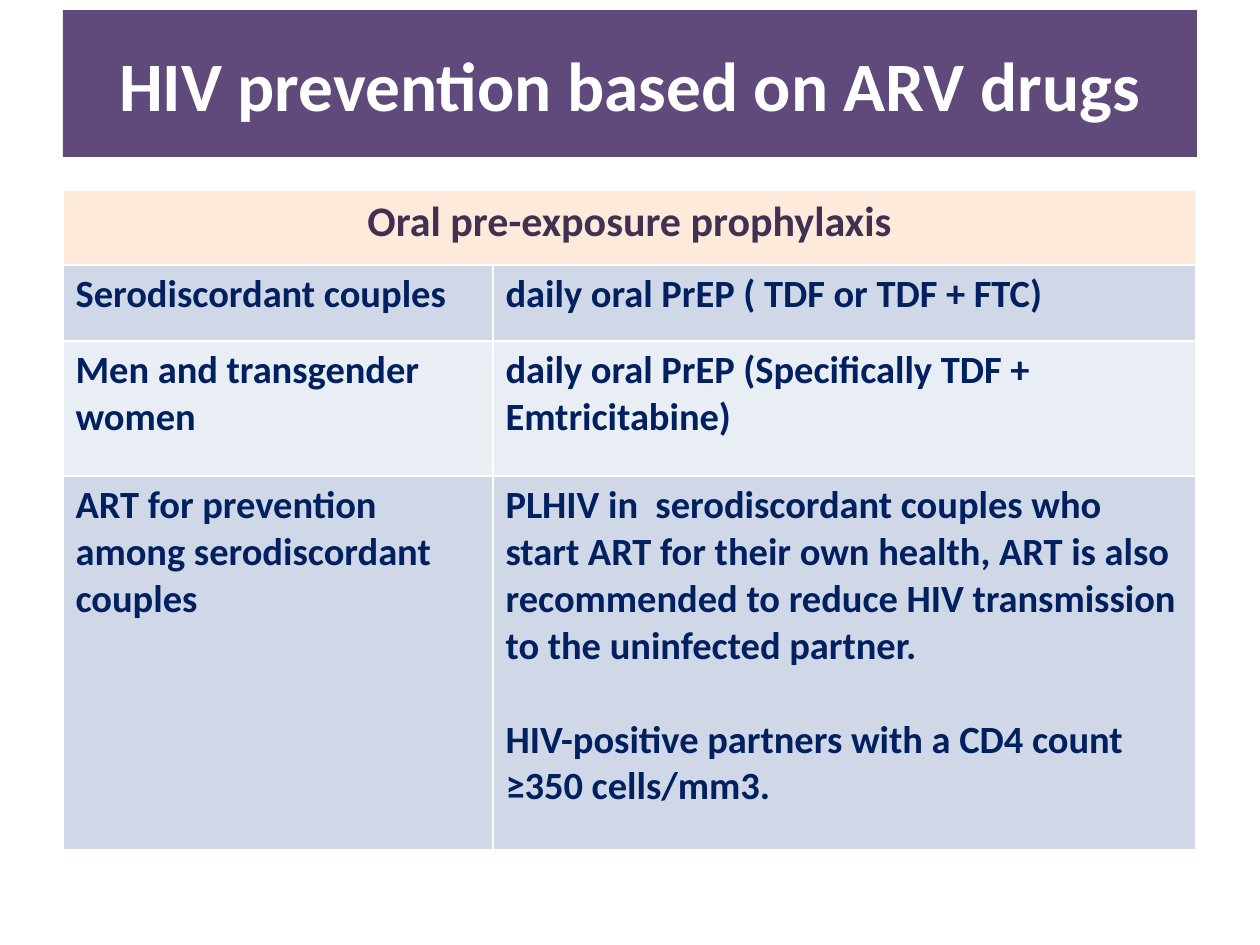
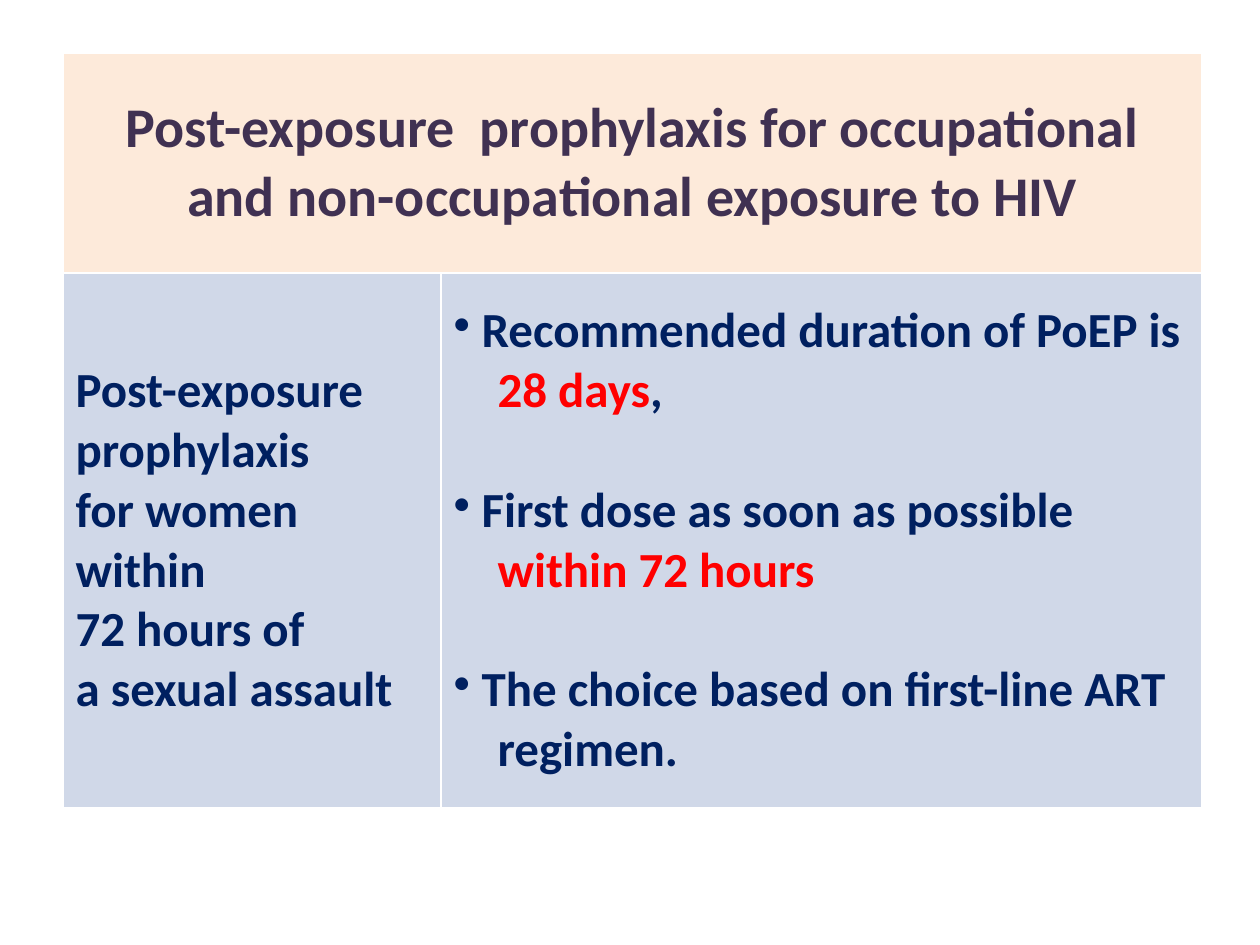
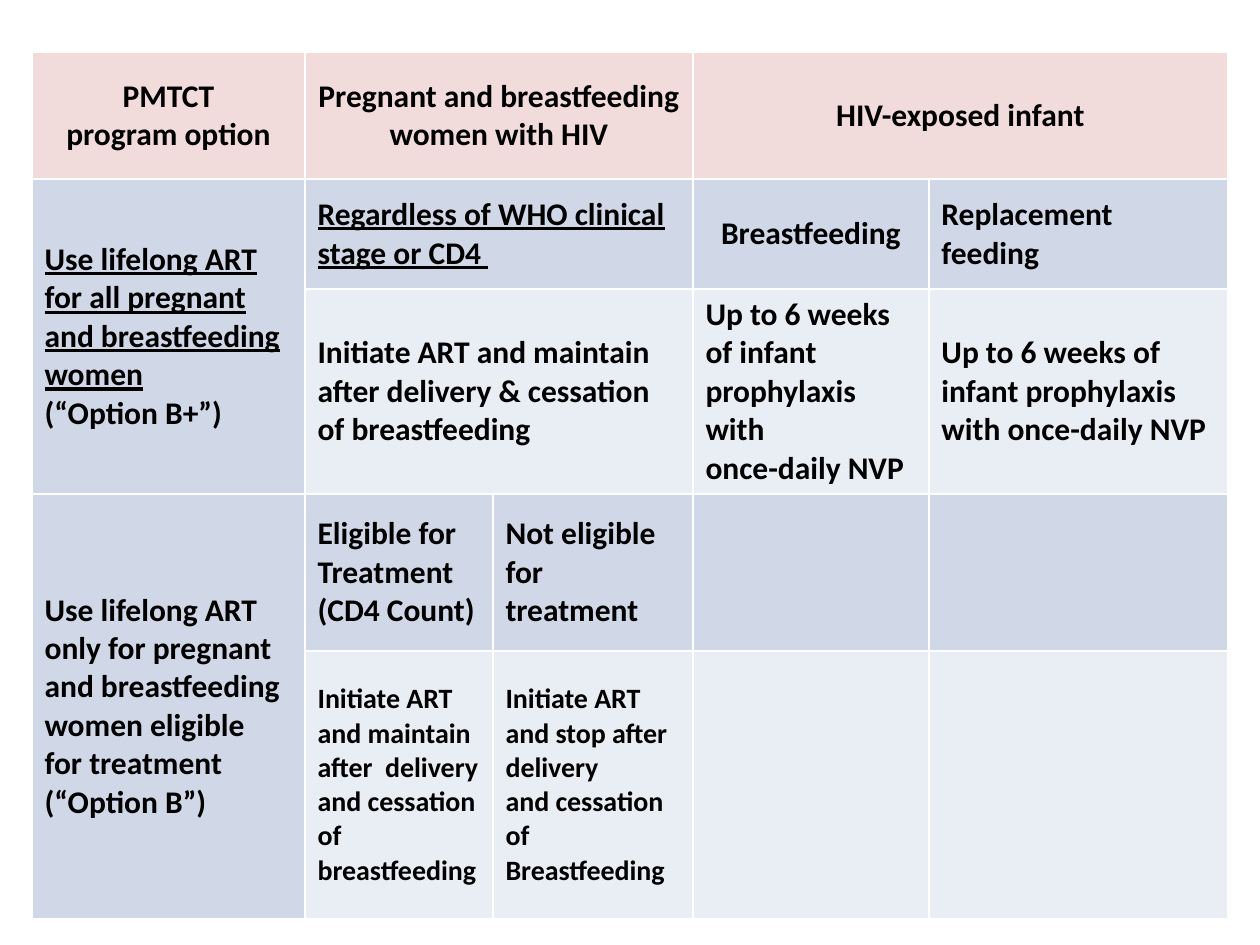
from pptx import Presentation
from pptx import util as u
from pptx.dml.color import RGBColor
from pptx.enum import shapes, text
from pptx.oxml.xmlchemy import OxmlElement

PX = 914400 / 126
FONT = "Calibri"
WHITE = RGBColor(0xFF, 0xFF, 0xFF)
BLACK = RGBColor(0, 0, 0)
RED = RGBColor(0xFF, 0, 0)
NAVY = RGBColor(0x00, 0x20, 0x60)
PLUM = RGBColor(0x40, 0x31, 0x52)
PURPLE = RGBColor(0x60, 0x4A, 0x7B)
PEACH = RGBColor(0xFD, 0xEA, 0xDA)
PINK = RGBColor(0xF2, 0xDC, 0xDB)
BANDS = (RGBColor(0xE9, 0xED, 0xF4), RGBColor(0xD0, 0xD8, 0xE8))

# Paragraph formats; a paragraph is a string or (runs, format), a run a string or (text, format)
BULLET = {"bullet": True, "left": 28}
NEXT_BULLET = {**BULLET, "gap": 34.2}
HANGING = {"left": 44}
CENTRED = {"align": text.PP_ALIGN.CENTER}
UNDER = {"underline": True}
ALERT = {"color": RED}

# Content: None marks a cell covered by a merge, [] an empty cell
SLIDES = [
    {
        "title": "HIV prevention based on ARV drugs",
        "at": (63, 190), "cols": (430, 703), "rows": (75, 76, 135, 374),
        "merges": [(0, 0, 0, 1)], "anchor": text.MSO_ANCHOR.TOP,
        "head": {"fill": PEACH, "color": PLUM, "size": 24},
        "body": {"color": NAVY, "size": 22},
        "cells": [
            [["Oral pre-exposure prophylaxis"], None],
            [["Serodiscordant couples"], ["daily oral PrEP ( TDF or TDF + FTC)"]],
            [["Men and transgender women"],
             ["daily oral PrEP (Specifically TDF + Emtricitabine)"]],
            [["ART for prevention among serodiscordant couples"],
             ["PLHIV in  serodiscordant couples who start ART for their own health, "
              "ART is also recommended to reduce HIV transmission to the uninfected partner.",
              (["HIV-positive partners with a CD4 count ≥350 cells/mm3."], {"gap": 26.85})]],
        ],
    },
    {
        "at": (63, 53), "cols": (378, 761), "rows": (220, 535),
        "merges": [(0, 0, 0, 1)], "anchor": text.MSO_ANCHOR.MIDDLE,
        "head": {"fill": PEACH, "color": PLUM, "size": 32},
        "body": {"color": NAVY, "size": 28},
        "cells": [
            [["Post-exposure  prophylaxis for occupational and "
              "non-occupational exposure to HIV"], None],
            [["Post-exposure prophylaxis", "for women within", "72 hours of",
              "a sexual assault"],
             [(["Recommended duration of PoEP is"], BULLET),
              ([("28 days", ALERT), ","], HANGING),
              (["First dose as soon as possible"], NEXT_BULLET),
              ([("within 72 hours", ALERT)], HANGING),
              (["The choice based on first-line ART"], NEXT_BULLET),
              (["regimen."], HANGING)]],
        ],
    },
    {
        "at": (32, 52), "cols": (273, 188, 200, 236, 299), "rows": (127, 110, 205, 157, 268),
        "merges": [(0, 1, 0, 2), (0, 3, 0, 4), (1, 0, 2, 0), (1, 1, 1, 2),
                   (2, 1, 2, 2), (3, 0, 4, 0)],
        "anchor": text.MSO_ANCHOR.MIDDLE,
        "head": {"fill": PINK, "color": BLACK, "size": 18},
        "body": {"color": BLACK, "size": 18},
        "last_size": 16,
        "cells": [
            [["PMTCT", "program option"],
             ["Pregnant and breastfeeding", "women with HIV"], None,
             ["HIV-exposed infant"], None],
            [[([("Use lifelong ART", UNDER)], {}), ([("for all pregnant", UNDER)], {}),
              ([("and breastfeeding", UNDER)], {}), ([("women", UNDER)], {}),
              "(“Option B+”)"],
             [([("Regardless of WHO clinical stage or CD4 ", UNDER)], {})], None,
             [(["Breastfeeding"], CENTRED)], ["Replacement", "feeding"]],
            [None,
             ["Initiate ART and maintain after delivery & cessation of breastfeeding"], None,
             ["Up to 6 weeks of infant", "prophylaxis with", "once-daily NVP"],
             ["Up to 6 weeks of infant prophylaxis with once-daily NVP"]],
            [["Use lifelong ART", "only for pregnant", "and breastfeeding",
              "women eligible", "for treatment", "(“Option B”)"],
             ["Eligible for", "Treatment", "(CD4 Count)"],
             ["Not eligible for", "treatment"], [], []],
            [None,
             ["Initiate ART and maintain", "after  delivery", "and cessation of",
              "breastfeeding"],
             ["Initiate ART and stop after delivery", "and cessation of", "Breastfeeding"],
             [], []],
        ],
    },
]


def px(n):
    return u.Emu(round(n * PX))


def add_run(p, words, color, size, **fmt):
    r = p.add_run()
    r.text = words
    r.font.color.rgb = color
    for name, value in {"name": FONT, "bold": True, "size": u.Pt(size), **fmt}.items():
        setattr(r.font, name, value)


def format_paragraph(p, align=None, gap=0, left=0, bullet=False):
    p.alignment = align
    if gap:
        p.space_before = u.Pt(gap)
    pPr = p._p.get_or_add_pPr()
    if left:
        pPr.set("marL", str(px(left)))
        pPr.set("indent", str(-px(left) if bullet else 0))
    if bullet:
        bu = OxmlElement("a:buChar")
        bu.set("char", "•")
        pPr.append(bu)


def fill_text(tf, paragraphs, base, align=None):
    for i, item in enumerate(paragraphs):
        runs, fmt = ([item], {}) if isinstance(item, str) else item
        p = tf.add_paragraph() if i else tf.paragraphs[0]
        format_paragraph(p, **{"align": align, **fmt})
        for run in runs:
            words, extra = (run, {}) if isinstance(run, str) else run
            add_run(p, words, **{**base, **extra})


def add_title(slide, title):
    sp = slide.shapes.add_shape(shapes.MSO_SHAPE.RECTANGLE, px(63), px(10), px(1134), px(147))
    sp.shadow.inherit = False
    sp.fill.solid()
    sp.fill.fore_color.rgb = PURPLE
    sp.line.fill.background()
    sp.text_frame.vertical_anchor = text.MSO_ANCHOR.MIDDLE
    fill_text(sp.text_frame, [title], {"color": WHITE, "size": 39.6}, **CENTRED)


def add_grid(slide, data):
    cols, rows = data["cols"], data["rows"]
    table = slide.shapes.add_table(len(rows), len(cols), *map(px, data["at"]),
                                   px(sum(cols)), px(sum(rows))).table
    for column, width in zip(table.columns, cols):
        column.width = px(width)
    for row, height in zip(table.rows, rows):
        row.height = px(height)
    for top, left, bottom, right in data["merges"]:
        table.cell(top, left).merge(table.cell(bottom, right))

    # Header row in its own colour, body rows in alternating bands
    for i, row in enumerate(data["cells"]):
        base = dict(data["body"] if i else data["head"])
        fill = base.pop("fill", BANDS[i % 2])
        if i == len(rows) - 1:
            base["size"] = data.get("last_size", base["size"])
        for j, paragraphs in enumerate(row):
            cell = table.cell(i, j)
            cell.fill.solid()
            cell.fill.fore_color.rgb = fill
            cell.vertical_anchor = data["anchor"]
            fill_text(cell.text_frame, paragraphs or [], base, **({} if i else CENTRED))


def main():
    prs = Presentation()
    prs.slide_width, prs.slide_height = px(1260), px(945)
    for data in SLIDES:
        slide = prs.slides.add_slide(prs.slide_layouts[6])
        add_grid(slide, data)
        if "title" in data:
            add_title(slide, data["title"])
    prs.save("out.pptx")


if __name__ == "__main__":
    main()
